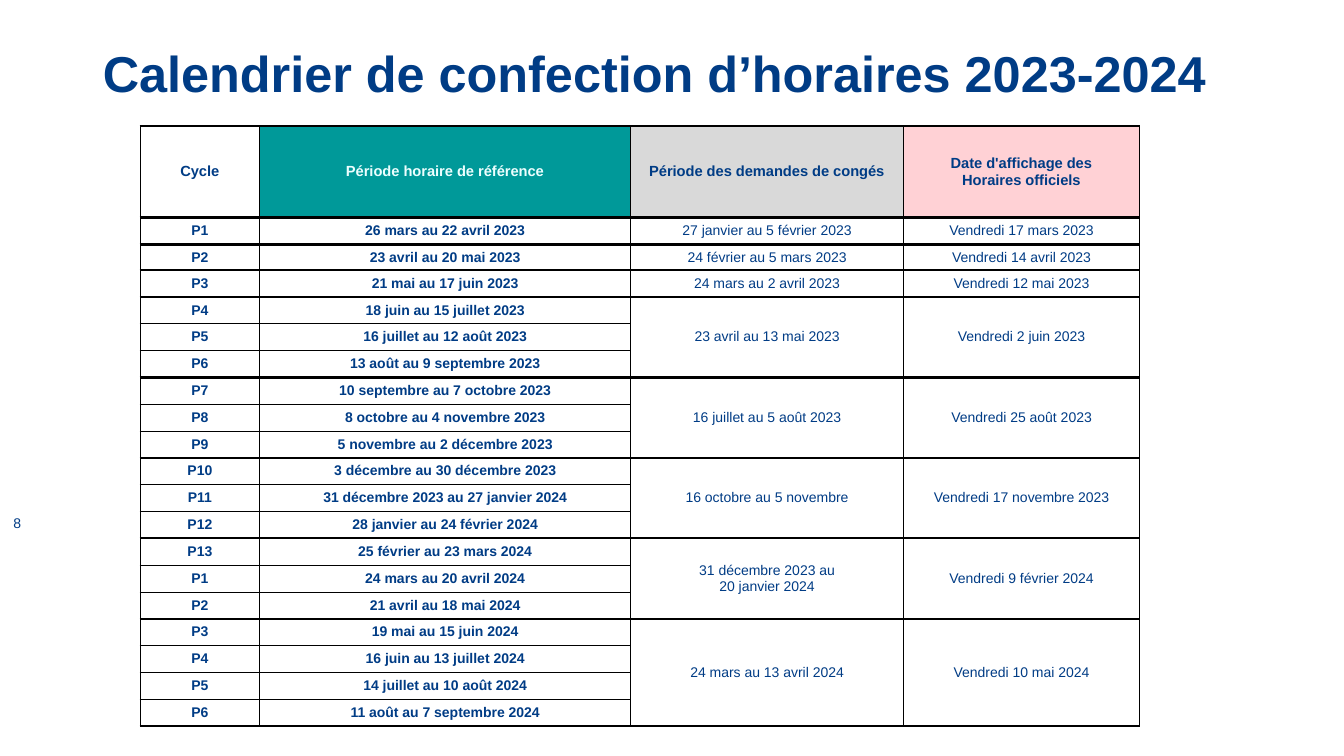
from lxml import etree
from pptx import Presentation
from pptx import util as u
from pptx.dml import color
from pptx.enum import text
from pptx.oxml import ns

NAVY = "003C85"
HEADERS = [
    ("Cycle", NAVY, None),
    ("Période horaire de référence", "ECFEFE", "009999"),
    ("Période des demandes de congés", NAVY, "D9D9D9"),
    ("Date d'affichage des\nHoraires officiels", NAVY, "FFD1D5"),
]
GROUPS = [
    ("27 janvier au 5 février 2023", "Vendredi 17 mars 2023",
     [("P1", "26 mars au 22 avril 2023")]),
    ("24 février au 5 mars 2023", "Vendredi 14 avril 2023",
     [("P2", "23 avril au 20 mai 2023")]),
    ("24 mars au 2 avril 2023", "Vendredi 12 mai 2023",
     [("P3", "21 mai au 17 juin 2023")]),
    ("23 avril au 13 mai 2023", "Vendredi 2 juin 2023",
     [("P4", "18 juin au 15 juillet 2023"),
      ("P5", "16 juillet au 12 août 2023"),
      ("P6", "13 août au 9 septembre 2023")]),
    ("16 juillet au 5 août 2023", "Vendredi 25 août 2023",
     [("P7", "10 septembre au 7 octobre 2023"),
      ("P8", "8 octobre au 4 novembre 2023"),
      ("P9", "5 novembre au 2 décembre 2023")]),
    ("16 octobre au 5 novembre", "Vendredi 17 novembre 2023",
     [("P10", "3 décembre au 30 décembre 2023"),
      ("P11", "31 décembre 2023 au 27 janvier 2024"),
      ("P12", "28 janvier au 24 février 2024")]),
    ("31 décembre 2023 au\n20 janvier 2024", "Vendredi 9 février 2024",
     [("P13", "25 février au 23 mars 2024"),
      ("P1", "24 mars au 20 avril 2024"),
      ("P2", "21 avril au 18 mai 2024")]),
    ("24 mars au 13 avril 2024", "Vendredi 10 mai 2024",
     [("P3", "19 mai au 15 juin 2024"),
      ("P4", "16 juin au 13 juillet 2024"),
      ("P5", "14 juillet au 10 août 2024"),
      ("P6", "11 août au 7 septembre 2024")]),
]
COLUMN_SHARES = [8.89, 27.6, 20.31, 17.56]
ROW_SHARES = [12.13, 3.55, 3.37] + [3.55] * 17


def rgb(value):
    """Turn a hex string into a colour."""
    return color.RGBColor.from_string(value)


class SlideBuilder:
    """Hold the style and the current slide; lengths are percentages of the slide."""

    font = "Arial"
    thin, edge, thick = 0.5, 1, 2

    def __init__(self, presentation):
        """Add a title-only slide."""
        self.width = presentation.slide_width
        self.height = presentation.slide_height
        self.slide = presentation.slides.add_slide(presentation.slide_layouts[5])

    def across(self, share):
        """Convert a share of the slide width."""
        return u.Emu(round(self.width * share / 100))

    def down(self, share):
        """Convert a share of the slide height."""
        return u.Emu(round(self.height * share / 100))

    def area(self, left, top, width, height):
        """Convert a rectangle of shares."""
        return self.across(left), self.down(top), self.across(width), self.down(height)

    def add_wording(self, paragraph, wording, size, ink=NAVY, bold=False,
                    align=text.PP_ALIGN.CENTER):
        """Add runs separated by line breaks."""
        paragraph.alignment = align
        for index, line in enumerate(wording.split("\n")):
            if index:
                paragraph.add_line_break()
            run = paragraph.add_run()
            run.text = line
            run.font.name = self.font
            run.font.size = u.Pt(size)
            run.font.bold = bold
            run.font.color.rgb = rgb(ink)

    def title(self, wording, *shares):
        """Place and format the title."""
        shape = self.slide.shapes.title
        shape.left, shape.top, shape.width, shape.height = self.area(*shares)
        frame = shape.text_frame
        frame.auto_size = text.MSO_AUTO_SIZE.NONE
        frame.vertical_anchor = text.MSO_ANCHOR.MIDDLE
        paragraph = frame.paragraphs[0]
        paragraph.line_spacing = 0.9
        self.add_wording(paragraph, wording, 36, bold=True, align=text.PP_ALIGN.LEFT)

    def page_number(self, wording, *shares):
        """Add the page number."""
        frame = self.slide.shapes.add_textbox(*self.area(*shares)).text_frame
        frame.word_wrap = True
        frame.vertical_anchor = text.MSO_ANCHOR.MIDDLE
        self.add_wording(frame.paragraphs[0], wording, 10)

    def border(self, cell, **widths):
        """Draw black cell borders, leaving out those without a width."""
        properties = cell._tc.get_or_add_tcPr()
        for side in "LRTB":
            width = widths[side]
            line = etree.SubElement(properties, ns.qn(f"a:ln{side}"),
                                    w=str(u.Pt(width or 0)))
            if width:
                fill = etree.SubElement(line, ns.qn("a:solidFill"))
                etree.SubElement(fill, ns.qn("a:srgbClr"), val="000000")
            else:
                etree.SubElement(line, ns.qn("a:noFill"))

    def cell(self, cell, column, top, bottom, wording="", size=10, ink=NAVY,
             bold=False, fill=None):
        """Format one cell and add its wording."""
        cell.margin_left = cell.margin_right = cell.margin_top = cell.margin_bottom = 0
        cell.vertical_anchor = text.MSO_ANCHOR.MIDDLE
        self.border(cell, L=self.thin if column else self.edge,
                    R=self.edge if column == len(HEADERS) - 1 else self.thin,
                    T=top, B=bottom)
        if fill:
            cell.fill.solid()
            cell.fill.fore_color.rgb = rgb(fill)
        else:
            cell.fill.background()
        paragraph = cell.text_frame.paragraphs[0]
        if wording:
            self.add_wording(paragraph, wording, size, ink, bold)
        else:
            etree.SubElement(paragraph._p, ns.qn("a:endParaRPr"), sz=str(size * 100))

    def calendar(self, left, top):
        """Add the calendar table with its merged groups."""
        frame = self.slide.shapes.add_table(
            len(ROW_SHARES), len(COLUMN_SHARES),
            *self.area(left, top, sum(COLUMN_SHARES), sum(ROW_SHARES)))
        table = frame.table
        table.first_row = table.horz_banding = False
        for column, share in zip(table.columns, COLUMN_SHARES):
            column.width = self.across(share)
        for row, share in zip(table.rows, ROW_SHARES):
            row.height = self.down(share)
        for column, (wording, ink, fill) in enumerate(HEADERS):
            self.cell(table.cell(0, column), column, self.edge, self.thick,
                      wording, 10.5, ink, True, fill)
        start = 1
        for request, posting, cycles in GROUPS:
            end = start + len(cycles) - 1
            for row, cycle in enumerate(cycles, start):
                upper = self.thick if row == start else self.thin
                lower = self.thick if row == end else self.thin
                for column, wording in enumerate(cycle):
                    self.cell(table.cell(row, column), column, upper, lower,
                              wording, bold=True)
                for column, wording in enumerate((request, posting), 2):
                    first = row == start
                    self.cell(table.cell(row, column), column,
                              self.thick if first else None,
                              self.thick if first or row == end else None,
                              wording if first else "")
            if end > start:
                for column in (2, 3):
                    table.cell(start, column).merge(table.cell(end, column))
            start = end + 1


def main():
    """Build the calendar slide."""
    presentation = Presentation()
    presentation.slide_width = u.Inches(13.33)
    presentation.slide_height = u.Inches(7.5)
    builder = SlideBuilder(presentation)
    builder.title("Calendrier de confection d’horaires 2023-2024", 6.9, 5.33, 86.25, 9.6)
    builder.page_number("8", 0, 66.53, 2.55, 5.33)
    builder.calendar(10.43, 16.67)
    presentation.save("out.pptx")


if __name__ == "__main__":
    main()
